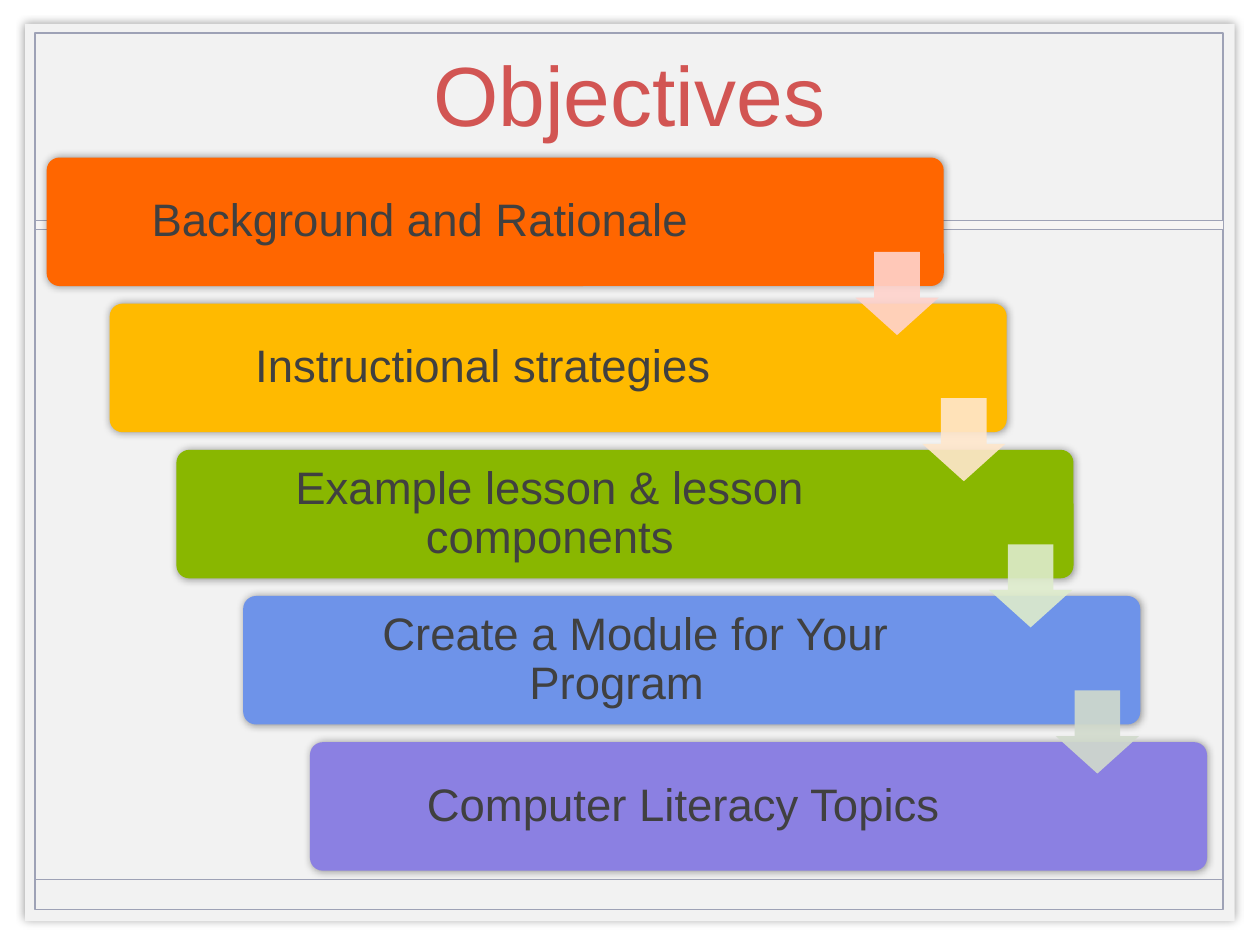
from lxml import etree
from pptx import Presentation
from pptx.dml.color import RGBColor
from pptx.enum.shapes import MSO_CONNECTOR, MSO_SHAPE
from pptx.enum.text import MSO_ANCHOR, PP_ALIGN
from pptx.oxml import parse_xml
from pptx.oxml.ns import nsdecls, qn
from pptx.util import Inches, Pt

RECT = MSO_SHAPE.RECTANGLE
ROUND = MSO_SHAPE.ROUNDED_RECTANGLE
DOWN = MSO_SHAPE.DOWN_ARROW
LINE = MSO_CONNECTOR.STRAIGHT
MIDDLE = MSO_ANCHOR.MIDDLE
CENTER = PP_ALIGN.CENTER

HUES = {
    "page": "FFFFFF", "panel": "F2F2F2", "rule": "9EA2B6", "band": "F7F5F4",
    "title": "D25553", "text": "404040",
}
STEPS = [
    ("Background and Rationale", 0.37, "FF6600", 0),
    ("Instructional strategies", 0.87, "FFBA00", 0),
    ("Example lesson & lesson components", 1.4, "89B700", 0),
    ("Create a Module for Your Program", 1.93, "6E93E9", 0.3),
    ("Computer Literacy Topics", 2.46, "8B80E2", 0),
]
ARROWS = ["FFD3CC", "FFE7CC", "DEECCC", "D1DACC"]
PITCH = 1.16
SHIFT = 0.53


class Deck:
    """Holds the style and the current slide."""

    def __init__(self):
        self.prs = Presentation()
        self.prs.slide_width, self.prs.slide_height = Inches(10), Inches(7.5)
        self.slide = self.prs.slides.add_slide(self.prs.slide_layouts[5])
        self.shapes = self.slide.shapes
        fill = self.slide.background.fill
        fill.solid()
        fill.fore_color.rgb = self.hue("page")

    def hue(self, name):
        return RGBColor.from_string(HUES.get(name, name))

    def shape(self, kind, box, fill=None, line=None, adjust=(), glow=False):
        item = self.shapes.add_shape(kind, *map(Inches, box))
        item.shadow.inherit = False
        for index, value in enumerate(adjust):
            item.adjustments[index] = value
        if fill:
            item.fill.solid()
            item.fill.fore_color.rgb = self.hue(fill)
        else:
            item.fill.background()
        if line:
            item.line.color.rgb = self.hue("rule")
            item.line.width = Pt(line)
        else:
            item.line.fill.background()
        if glow:
            effects = item._element.spPr.find(qn("a:effectLst"))
            effects.append(parse_xml(
                f'<a:outerShdw {nsdecls("a")} blurRad="{Pt(5)}" dist="0" dir="0">'
                '<a:srgbClr val="000000"><a:alpha val="40000"/></a:srgbClr>'
                '</a:outerShdw>'))
        return item

    def rule(self, left, right, top):
        item = self.shapes.add_connector(LINE, *map(Inches, (left, top, right, top)))
        item.line.color.rgb = self.hue("rule")
        item.line.width = Pt(1)
        etree.SubElement(item._element.spPr, qn("a:effectLst"))

    def text(self, item, words, size, color):
        frame = item.text_frame
        frame.word_wrap = True
        frame.vertical_anchor = MIDDLE
        para = frame.paragraphs[0]
        para.text = words
        para.alignment = CENTER
        para.font.name = "Arial"
        para.font.size = Pt(size)
        para.font.color.rgb = self.hue(color)
        return frame

    def title(self, words, box):
        item = self.shapes.title
        item.left, item.top, item.width, item.height = map(Inches, box)
        self.text(item, words, 48, "title")
        self.shapes._spTree.append(item._element)

    def label(self, words, box, indent):
        frame = self.text(self.shapes.add_textbox(*map(Inches, box)), words, 26, "text")
        frame.margin_left = frame.margin_right = Inches(0.11)
        frame.margin_top = frame.margin_bottom = Inches(0.11)
        para = frame.paragraphs[0]
        para.line_spacing = 0.9
        if indent:
            para._p.get_or_add_pPr().set("indent", str(Inches(indent)))

    def arrow(self, left, top, fill):
        item = self.shape(DOWN, (left, top, 0.66, 0.66), fill, adjust=(0.55, 0.45))
        color = item._element.spPr.find(qn("a:solidFill"))[0]
        etree.SubElement(color, qn("a:alpha"), val="90000")


def main():
    deck = Deck()
    deck.shape(RECT, (0.2, 0.19, 9.6, 7.12), "panel", glow=True)
    deck.shape(RECT, (0.28, 0.26, 9.43, 6.96), line=1)
    deck.rule(0.28, 9.71, 6.98)
    deck.shape(RECT, (0.28, 1.75, 9.43, 0.07), "band", line=0.25)
    deck.title("Objectives", (0.98, 0, 8.03, 1.47))
    for row, (words, left, fill, indent) in enumerate(STEPS):
        top = 1.25 + row * PITCH
        deck.shape(ROUND, (left, top, 7.12, 1.02), fill, adjust=(0.1,), glow=True)
        deck.label(words, (left + 0.03, top + 0.03, 5.87, 0.96), indent)
    for row, fill in enumerate(ARROWS):
        deck.arrow(6.79 + row * SHIFT, 2 + row * PITCH, fill)
    deck.prs.save("out.pptx")


if __name__ == "__main__":
    main()
